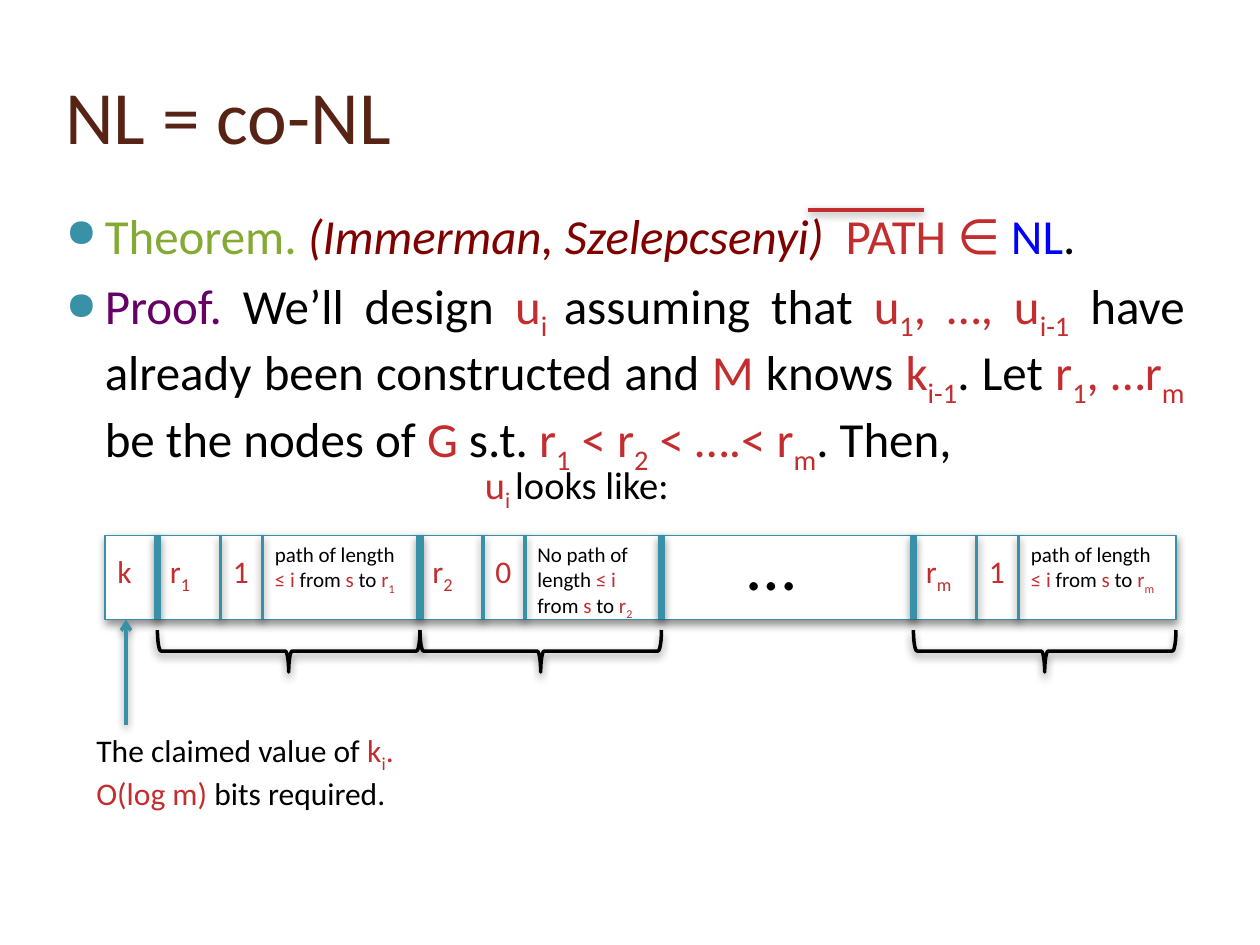
from dataclasses import dataclass
from typing import NamedTuple

from lxml.etree import SubElement
from pptx import Presentation
from pptx.dml.color import RGBColor
from pptx.enum.shapes import MSO_CONNECTOR, MSO_SHAPE
from pptx.enum.text import MSO_ANCHOR, MSO_AUTO_SIZE, PP_ALIGN
from pptx.oxml.ns import qn
from pptx.util import Emu, Pt

PX = 914400 // 120


@dataclass(frozen=True)
class Theme:
    font: str = "Calibri"
    title: str = "572314"
    ink: str = "000000"
    math: str = "C32D2E"
    theorem: str = "84AA33"
    authors: str = "800000"
    complexity: str = "0000FF"
    proof: str = "660066"
    accent: str = "3891A7"
    paper: str = "FFFFFF"
    title_size: int = 43
    body_size: int = 28
    caption_size: int = 22
    label_size: int = 18
    path_size: int = 12
    dots_size: int = 40
    thin: float = 2
    thick: float = 4.25


THEME = Theme()


class Box(NamedTuple):
    left: int
    top: int
    width: int
    height: int

    def emu(self):
        return [Emu(round(length * PX)) for length in self]


def rgb(colour):
    return RGBColor.from_string(colour)


def math(text):
    return text, THEME.math


def plain(text):
    return text, THEME.ink


def write_runs(paragraph, pieces, size):
    """Add (text, colour) pieces; text between tildes is set as subscript."""
    for text, colour in pieces:
        for index, part in enumerate(text.split("~")):
            if not part:
                continue
            run = paragraph.add_run()
            run.text = part
            font = run.font
            font.name, font.size = THEME.font, Pt(size)
            font.color.rgb = rgb(colour)
            font.italic = colour == THEME.authors
            if index % 2:
                font._element.set("baseline", "-25000")


def add_text(slide, box, paragraphs, size, grow=True):
    frame = slide.shapes.add_textbox(*box.emu()).text_frame
    frame.word_wrap = True
    frame.auto_size = MSO_AUTO_SIZE.SHAPE_TO_FIT_TEXT if grow else MSO_AUTO_SIZE.NONE
    for index, pieces in enumerate(paragraphs):
        paragraph = frame.add_paragraph() if index else frame.paragraphs[0]
        write_runs(paragraph, pieces, size)
    return frame


def add_shadow(shape):
    effects = SubElement(shape._element.spPr, qn("a:effectLst"))
    shadow = SubElement(effects, qn("a:outerShdw"), blurRad=str(Pt(5)), dist=str(Pt(2)),
                        dir="5400000", rotWithShape="0")
    colour = SubElement(shadow, qn("a:srgbClr"), val=THEME.ink)
    SubElement(colour, qn("a:alpha"), val="43000")


def add_line(slide, start, end, colour, width, arrow=False):
    ends = [Emu(length * PX) for length in (*start, *end)]
    line = slide.shapes.add_connector(MSO_CONNECTOR.STRAIGHT, *ends)
    line.line.color.rgb = rgb(colour)
    line.line.width = Pt(width)
    if arrow:
        SubElement(line.line._get_or_add_ln(), qn("a:tailEnd"), type="arrow")
    add_shadow(line)


def add_brace(slide, box):
    """Draw a brace that fills the box and points down."""
    left = box.left + (box.width - box.height) / 2
    top = box.top + (box.height - box.width) / 2
    upright = Box(left, top, box.height, box.width)
    brace = slide.shapes.add_shape(MSO_SHAPE.LEFT_BRACE, *upright.emu())
    brace.rotation = 270
    brace.fill.background()
    brace.line.color.rgb = rgb(THEME.ink)
    brace.line.width = Pt(THEME.thin)
    add_shadow(brace)


def add_bullet(paragraph):
    properties = paragraph._p.get_or_add_pPr()
    properties.set("marL", str(48 * PX))
    properties.set("indent", str(-37 * PX))
    colour = SubElement(properties, qn("a:buClr"))
    SubElement(colour, qn("a:srgbClr"), val=THEME.accent)
    SubElement(properties, qn("a:buSzPct"), val="80000")
    SubElement(properties, qn("a:buChar"), char="●")


def place_title(slide, box):
    title = slide.shapes.title
    title.left, title.top, title.width, title.height = box.emu()
    frame = title.text_frame
    frame.text = "NL = co-NL"
    frame.vertical_anchor = MSO_ANCHOR.MIDDLE
    heading = frame.paragraphs[0]
    heading.alignment = PP_ALIGN.LEFT
    font = heading.runs[0].font
    font.name, font.size = THEME.font, Pt(THEME.title_size)
    font.color.rgb = rgb(THEME.title)


def place_theorem(slide, box):
    theorem = [("Theorem. ", THEME.theorem),
               ("(Immerman, Szelepcsenyi)  ", THEME.authors),
               math("PATH ∈ "), ("NL", THEME.complexity), plain(".")]
    proof = [("Proof.", THEME.proof), plain(" We’ll design "), math("u~i ~"),
             plain("assuming that "), math("u~1~, …, u~i-1~"),
             plain(" have already been constructed and "), math("M "),
             plain("knows "), math("k~i-1~"), plain(". Let "),
             math("r~1~, …r~m~"), plain(" be the nodes of "), math("G "),
             plain("s.t. "), math("r~1~ < r~2~ < ….< r~m~"), plain(". Then,")]
    frame = add_text(slide, box, [theorem, proof], THEME.body_size, grow=False)
    for paragraph in frame.paragraphs:
        paragraph.alignment = PP_ALIGN.JUSTIFY
        paragraph.space_before = Pt(6)
        add_bullet(paragraph)
    bar_left, bar_top = box.left + 730, box.top + 10
    add_line(slide, (bar_left, bar_top), (bar_left + 110, bar_top), THEME.math, THEME.thin)


def add_divider(slide, strip, x, width):
    add_line(slide, (x, strip.top), (x, strip.top + strip.height), THEME.accent, width)


def add_node_record(slide, box, index, bit, path):
    """Place one node's name, bit and path cells, with the brace below them."""
    label_top = box.top + 10
    name_end, bit_end = box.left + 60, box.left + 100
    add_divider(slide, box, box.left, THEME.thick)
    for x in (name_end, bit_end):
        add_divider(slide, box, x, THEME.thin)
    add_text(slide, Box(box.left, label_top, 70, 48), [[math(f"r~{index}~")]], THEME.label_size)
    add_text(slide, Box(name_end, label_top, 50, 50), [[math(bit)]], THEME.label_size)
    add_text(slide, Box(bit_end, box.top, box.width - 100, 60), path, THEME.path_size)
    add_brace(slide, Box(box.left, box.top + box.height + 10, box.width, 40))


def place_certificate(slide, box):
    strip = slide.shapes.add_shape(MSO_SHAPE.RECTANGLE, *box.emu())
    strip.fill.solid()
    strip.fill.fore_color.rgb = rgb(THEME.paper)
    strip.line.color.rgb = rgb(THEME.accent)
    strip.line.width = Pt(0.75)
    add_shadow(strip)

    left, top, _, height = box
    add_text(slide, Box(left + 350, top - 77, 270, 56),
             [[math("u~i ~"), plain("looks like:")]], THEME.caption_size)
    add_text(slide, Box(left, top + 10, 50, 50), [[math("k")]], THEME.label_size)

    def route(index):
        return [plain("from "), math("s"), plain(" to "), math(f"r~{index}~")]

    def found(index):
        return [[plain("path of length")], [math("≤ i"), plain(" "), *route(index)]]

    missing = [[plain("No path of length "), math("≤ i")], route("2")]
    for offset, width, index, bit, path in ((50, 250, "1", "1", found("1")),
                                            (300, 230, "2", "0", missing),
                                            (770, 250, "m", "1", found("m"))):
        add_node_record(slide, Box(left + offset, top, width, height), index, bit, path)
    add_divider(slide, box, left + 530, THEME.thick)
    add_text(slide, Box(left + 600, top - 20, 170, 92), [[plain("…")]], THEME.dots_size)


def place_claim_note(slide, box, arrow_tip):
    add_line(slide, (arrow_tip[0], box.top), arrow_tip, THEME.accent, THEME.thin, arrow=True)
    claim = [plain("The claimed value of "), math("k~i~. O(log m)"), plain(" bits required.")]
    add_text(slide, box, [claim], THEME.label_size)


def main():
    deck = Presentation()
    deck.slide_width, deck.slide_height = Emu(1200 * PX), Emu(900 * PX)
    slide = deck.slides.add_slide(deck.slide_layouts[5])
    strip = Box(100, 510, 1020, 80)
    place_title(slide, Box(50, 40, 1060, 138))
    place_theorem(slide, Box(40, 190, 1100, 700))
    place_certificate(slide, strip)
    place_claim_note(slide, Box(80, 690, 320, 85), (120, strip.top + strip.height))
    deck.save("out.pptx")


if __name__ == "__main__":
    main()
